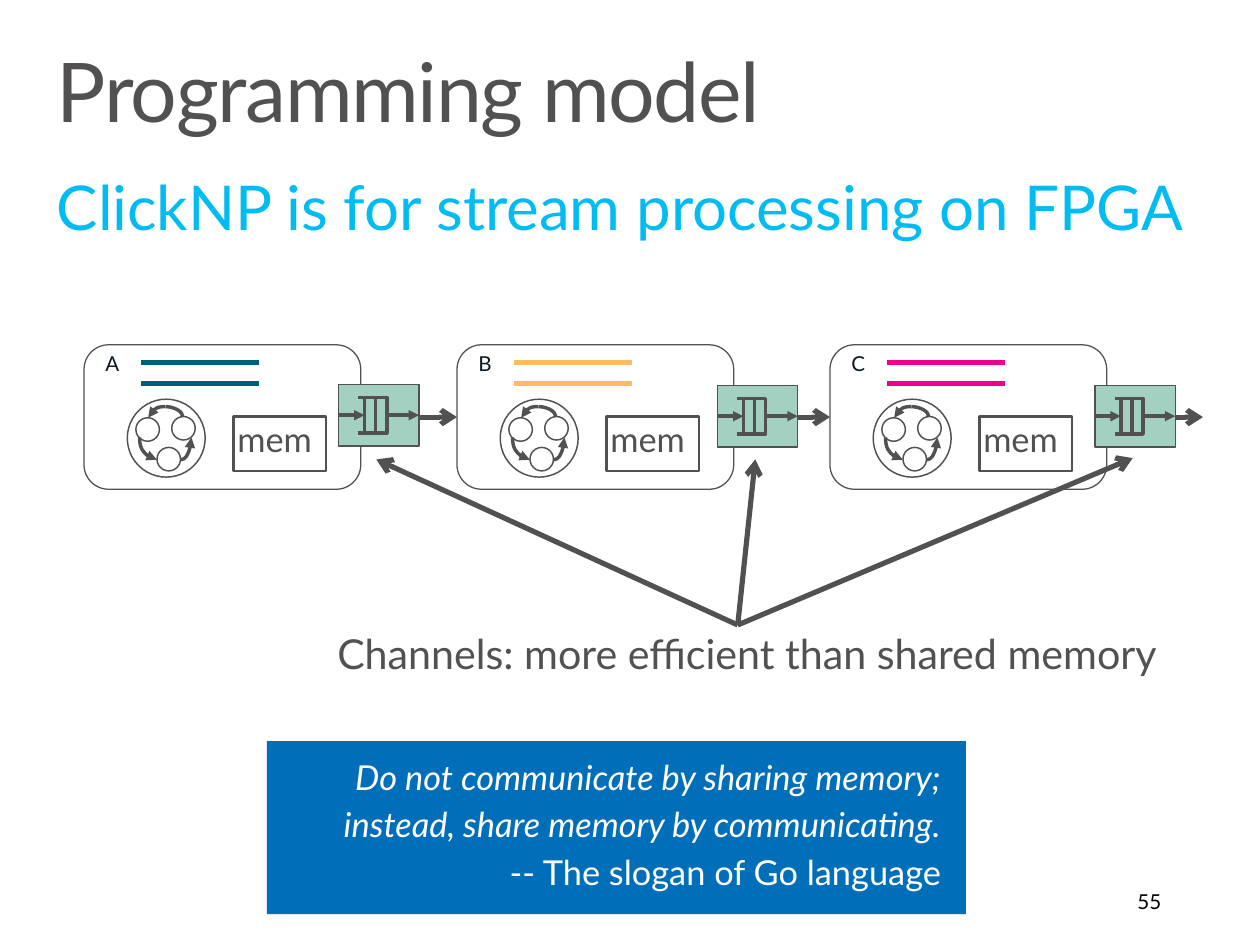
"""Build a slide on stream processing: three stages linked by channels."""
from dataclasses import dataclass
from typing import Any, Optional

import pptx
import pptx.dml.color
import pptx.enum.shapes
import pptx.enum.text
import pptx.oxml
import pptx.oxml.ns
import pptx.util

Pt = pptx.util.Pt
SHAPE = pptx.enum.shapes.MSO_SHAPE
LINK = pptx.enum.shapes.MSO_CONNECTOR
ALIGN = pptx.enum.text.PP_ALIGN
ANCHOR = pptx.enum.text.MSO_ANCHOR
TOP, LEFT, BOTTOM, RIGHT = range(4)

GREY, WHITE, BLUE, TEAL = "525051", "FFFFFF", "006EB9", "A2D1C2"
STAGE_X, STAGE_Y, STAGE_PITCH = 49, 201, 217.4
WIDE = (14.4, 11.5)
NARROW = (7.2, 3.6)


@dataclass
class Box:
    x: float
    y: float
    w: float
    h: float


@dataclass
class Style:
    size: float
    color: str = GREY
    align: Any = ALIGN.LEFT
    spacing: float = 0.9
    after: float = 0
    margins: tuple[float, float] = NARROW
    anchor: Any = ANCHOR.TOP
    wrap: bool = True


@dataclass
class Stroke:
    start: tuple[float, float]
    end: tuple[float, float]
    width: float = 2
    color: str = GREY
    head: Optional[str] = None
    tail: Optional[str] = None
    curved: bool = False


@dataclass
class Stage:
    name: str
    color: str
    channel_x: float
    channel_y: float
    pointer_y: float


STAGES = [
    Stage("A", "005E79", 197.4, 224, 267.8),
    Stage("B", "FFBA66", 418.2, 224.6, 267.8),
    Stage("C", "EC008C", 638.2, 224.6, 267),
]
STATES = [(42.5, 59.8), (30.2, 42.5), (51.1, 41.8)]
TRANSITIONS = [
    Stroke((56.2, 67), (62.6, 54), tail="triangle", curved=True),
    Stroke((42.5, 67), (32.4, 54), head="triangle", curved=True),
    Stroke((47.5, 36), (37.4, 42.5), tail="triangle", curved=True),
    Stroke((47.5, 36), (57.6, 41.8), curved=True),
]


def rgb(color: str) -> pptx.dml.color.RGBColor:
    return pptx.dml.color.RGBColor.from_string(color)


def write(sp: Any, lines: list[str], style: Style) -> None:
    tf = sp.text_frame
    tf.auto_size = pptx.enum.text.MSO_AUTO_SIZE.NONE
    tf.word_wrap = style.wrap
    tf.vertical_anchor = style.anchor
    tf.margin_left = tf.margin_right = Pt(style.margins[0])
    tf.margin_top = tf.margin_bottom = Pt(style.margins[1])
    for i, line in enumerate(lines):
        p = tf.add_paragraph() if i else tf.paragraphs[0]
        p.add_run().text = line
        p.alignment = style.align
        p.line_spacing = style.spacing
        p.space_before = Pt(0)
        p.space_after = Pt(style.after)
        p.font.name = "Lato"
        p.font.size = Pt(style.size)
        p.font.color.rgb = rgb(style.color)


def place(box: Box) -> tuple[Any, ...]:
    return Pt(box.x), Pt(box.y), Pt(box.w), Pt(box.h)


def text_box(shapes: Any, box: Box, line: str, style: Style) -> Any:
    sp = shapes.add_textbox(*place(box))
    write(sp, [line], style)
    return sp


def shape(shapes: Any, kind: Any, box: Box, fill: Optional[str] = WHITE,
          line: float = 0.75) -> Any:
    sp = shapes.add_shape(kind, *place(box))
    sp.shadow.inherit = False
    if fill:
        sp.fill.solid()
        sp.fill.fore_color.rgb = rgb(fill)
    else:
        sp.fill.background()
    if line:
        sp.line.width = Pt(line)
        sp.line.color.rgb = rgb(GREY)
    else:
        sp.line.fill.background()
    return sp


def connect(shapes: Any, stroke: Stroke, x: float = 0, y: float = 0) -> Any:
    (x1, y1), (x2, y2) = stroke.start, stroke.end
    sp = shapes.add_connector(LINK.CURVE if stroke.curved else LINK.STRAIGHT,
                              Pt(x + x1), Pt(y + y1), Pt(x + x2), Pt(y + y2))
    sp.line.width = Pt(stroke.width)
    sp.line.color.rgb = rgb(stroke.color)
    props = sp._element.spPr
    if stroke.curved:
        props.find(pptx.oxml.ns.qn("a:prstGeom")).set("prst", "curvedConnector2")
    ns = pptx.oxml.ns.nsdecls("a")
    for tag, kind in (("headEnd", stroke.head), ("tailEnd", stroke.tail)):
        if kind:
            sp.line._get_or_add_ln().append(pptx.oxml.parse_xml(f'<a:{tag} {ns} type="{kind}"/>'))
    props.append(pptx.oxml.parse_xml(f"<a:effectLst {ns}/>"))
    return sp


def draw_stage(shapes: Any, stage: Stage, x: float, y: float) -> Any:
    body = shape(shapes, SHAPE.ROUNDED_RECTANGLE, Box(x, y, 161.3, 84.2))
    body.adjustments[0] = 0.17
    text_box(shapes, Box(x + 2.9, y, 120, 21.6), stage.name,
             Style(12, "061922", spacing=1, margins=(9.5, 3.6)))
    machine = shapes.add_group_shape().shapes
    shape(machine, SHAPE.OVAL, Box(x + 25.2, y + 31.7, 45.4, 45.4), None, 0.85)
    for dx, dy in STATES:
        shape(machine, SHAPE.OVAL, Box(x + dx, y + dy, 13.7, 13.7), WHITE, 0.85)
    for stroke in TRANSITIONS:
        connect(machine, stroke, x, y)
    for dy in (10.1, 22.3):
        connect(shapes, Stroke((33.1, dy), (102.2, dy), 3, stage.color), x, y)
    memory = shape(shapes, SHAPE.RECTANGLE, Box(x + 87.1, y + 41.8, 54, 31.7), line=1.5)
    write(memory, ["mem"], Style(20, margins=(2.2, 3.6), wrap=False))
    return body


def draw_channel(shapes: Any, x: float, y: float) -> None:
    queue = shapes.add_group_shape().shapes
    frame = shape(queue, SHAPE.RECTANGLE, Box(x, y, 46.8, 36), TEAL)
    first, last = (shape(queue, SHAPE.RECTANGLE, Box(x + dx, y + 7.6, 6.5, 20.8), None, 2)
                   for dx in (15.1, 21.6))
    inlet = connect(queue, Stroke((0, 18), (15.1, 18), tail="triangle"), x, y)
    inlet.begin_connect(frame, LEFT)
    inlet.end_connect(first, LEFT)
    outlet = connect(queue, Stroke((28.1, 18), (46.8, 18), tail="triangle"), x, y)
    outlet.begin_connect(last, RIGHT)
    outlet.end_connect(frame, RIGHT)
    for dy in (7.6, 28.4):
        connect(queue, Stroke((18.2, dy), (11.5, dy)), x, y)


def main() -> None:
    prs = pptx.Presentation()
    prs.slide_width, prs.slide_height = Pt(734.4), Pt(550.8)
    slide = prs.slides.add_slide(prs.slide_layouts[5])
    shapes = slide.shapes

    title = shapes.title
    title.left, title.top, title.width, title.height = place(Box(21.6, 23, 691.2, 72))
    write(title, ["Programming model"], Style(48, margins=(11.5, 7.2)))
    title.text_frame.paragraphs[0].runs[0]._r.get_or_add_rPr().set("spc", "-80")
    text_box(shapes, Box(21.6, 95.8, 691.2, 54), "ClickNP is for stream processing on FPGA",
             Style(36, "00BCF2", margins=(11.5, 7.2)))

    bodies = [draw_stage(shapes, stage, STAGE_X + i * STAGE_PITCH, STAGE_Y)
              for i, stage in enumerate(STAGES)]
    for i, body in enumerate(bodies):
        x = STAGE_X + i * STAGE_PITCH
        arrow = connect(shapes, Stroke((161.3, 42.1), (STAGE_PITCH, 42.1), 3, tail="arrow"),
                        x, STAGE_Y)
        arrow.begin_connect(body, RIGHT)
        if i + 1 < len(bodies):
            arrow.end_connect(bodies[i + 1], LEFT)
    for stage in STAGES:
        draw_channel(shapes, stage.channel_x, stage.channel_y)

    text_box(shapes, Box(182.2, 357.8, 515.5, 49.7), "Channels: more efficient than shared memory",
             Style(24, after=6, margins=WIDE, wrap=False))
    for stage in STAGES:
        tip = (stage.channel_x + 22, stage.pointer_y)
        connect(shapes, Stroke((430, 364.3), tip, 3, tail="arrow"))

    quote = shape(shapes, SHAPE.RECTANGLE, Box(155.5, 432, 407.5, 100.8), BLUE, 0)
    write(quote, ["Do not communicate by sharing memory;",
                  "instead, share memory by communicating.",
                  "-- The slogan of Go language"],
          Style(20, WHITE, ALIGN.RIGHT, after=6, margins=WIDE))
    for p in quote.text_frame.paragraphs[:2]:
        p.font.italic = True
    text_box(shapes, Box(518.4, 510.5, 165.6, 29.5), "55",
             Style(12, "000000", ALIGN.RIGHT, 1, anchor=ANCHOR.MIDDLE))
    prs.save("out.pptx")


if __name__ == "__main__":
    main()
